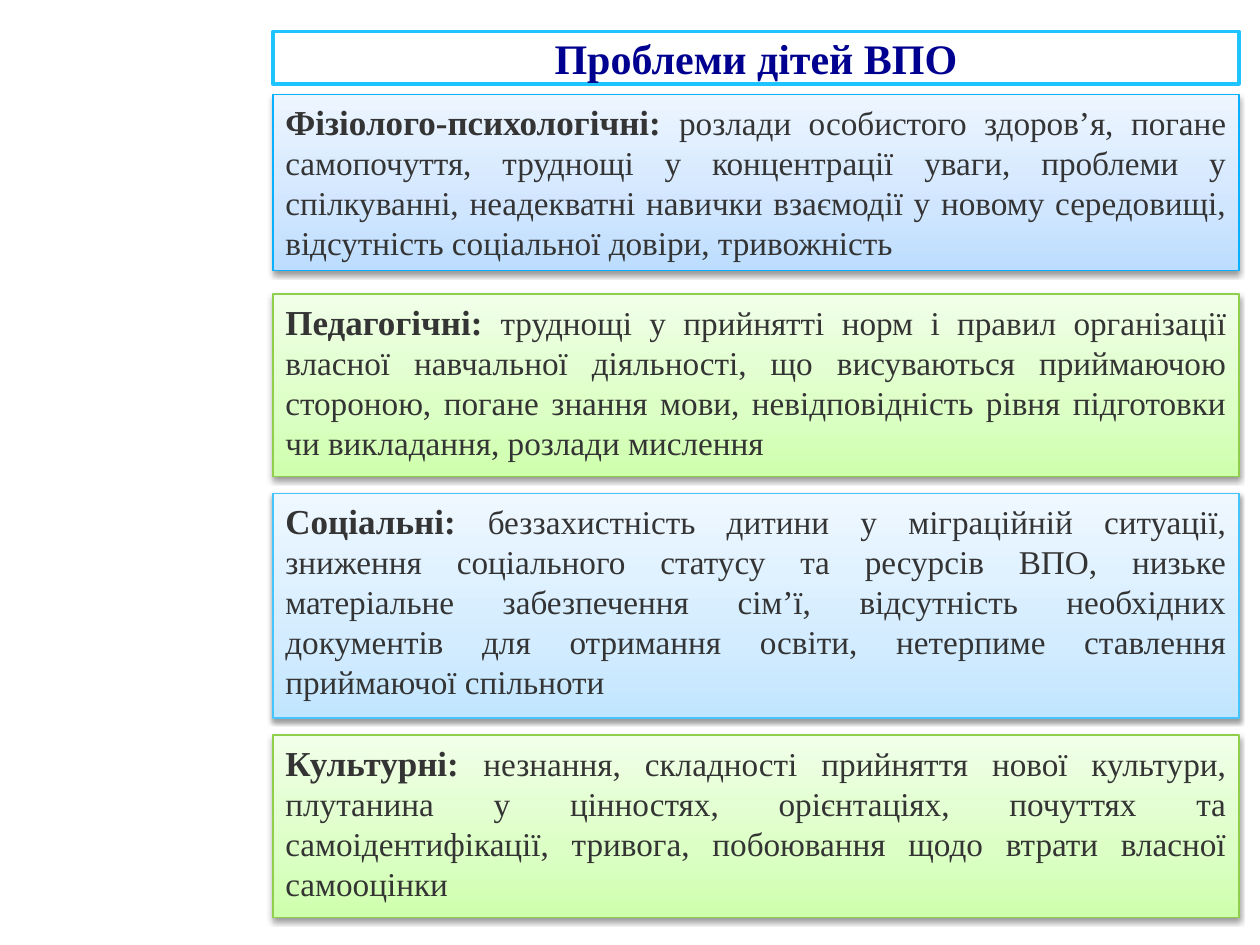
import copy

import lxml.etree
import pptx
import pptx.dml.color
import pptx.enum.shapes
import pptx.enum.text
import pptx.oxml.ns
import pptx.util

Pt = pptx.util.Pt
qn = pptx.oxml.ns.qn
ALIGN = pptx.enum.text.PP_ALIGN
ANCHOR = pptx.enum.text.MSO_ANCHOR
AUTO_SIZE = pptx.enum.text.MSO_AUTO_SIZE

FONT = "Times New Roman"
LEFT, WIDTH = 156, 552
COLORS = {
    "white": "FFFFFF",
    "title": "000090",
    "title_line": "1DC4FF",
    "text": "343434",
    "shadow": "000000",
}
# Gradient colours run from the bottom of a panel to its top.
STYLES = {
    "blue": {"line": "09B0FD", "stops": ("BCDDFF", "D0E6FF", "EDF5FF")},
    "green": {"line": "8FCF4B", "stops": ("CEFFAC", "DBFFC4", "F1FFE9")},
    "sky": {"line": "46C4FD", "stops": ("C1E5FF", "D3ECFF", "EFF8FF")},
}
STOP_POSITIONS = (0, 0.35, 1)

# Top, height, style, heading, description
PANELS = [
    (54, 100.8, "blue", "Фізіолого-психологічні: ",
     "розлади особистого здоров’я, погане самопочуття, труднощі у концентрації "
     "уваги, проблеми у спілкуванні, неадекватні навички взаємодії у новому "
     "середовищі, відсутність соціальної довіри, тривожність"),
    (168, 104.4, "green", "Педагогічні: ",
     "труднощі у прийнятті норм і правил організації власної навчальної "
     "діяльності, що висуваються приймаючою стороною, погане знання мови, "
     "невідповідність рівня підготовки чи викладання, розлади мислення"),
    (282, 128.4, "sky", "Соціальні: ",
     "беззахистність дитини у міграційній ситуації, зниження соціального "
     "статусу та ресурсів ВПО, низьке матеріальне забезпечення сім’ї, "
     "відсутність необхідних документів для отримання освіти, нетерпиме "
     "ставлення приймаючої спільноти"),
    (420, 104.4, "green", "Культурні: ",
     "незнання, складності прийняття нової культури, плутанина у цінностях, "
     "орієнтаціях, почуттях та самоідентифікації, тривога, побоювання щодо "
     "втрати власної самооцінки"),
]


def rgb(value):
    return pptx.dml.color.RGBColor.from_string(value)


def set_line(shape, color, width):
    shape.line.color.rgb = rgb(color)
    shape.line.width = Pt(width)


def set_gradient(shape, colors):
    fill = shape.fill
    fill.gradient()
    fill.gradient_angle = 90
    stop_list = shape.element.spPr.find(".//" + qn("a:gsLst"))
    stop_list.insert(1, copy.deepcopy(stop_list[0]))
    for stop, position, color in zip(fill.gradient_stops, STOP_POSITIONS, colors):
        stop.position = position
        stop.color.rgb = rgb(color)


def set_shadow(shape):
    """Give the shape a soft shadow that falls straight down."""
    shape.shadow.inherit = False
    effects = shape.element.spPr.find(qn("a:effectLst"))
    shadow = lxml.etree.SubElement(
        effects, qn("a:outerShdw"), blurRad=str(Pt(3.1)), dist=str(Pt(1.6)),
        dir="5400000", rotWithShape="0")
    color = lxml.etree.SubElement(shadow, qn("a:srgbClr"), val=COLORS["shadow"])
    lxml.etree.SubElement(color, qn("a:alpha"), val="38000")


def add_title(page, text):
    title = page.shapes.title
    title.left, title.top = Pt(LEFT), Pt(18)
    title.width, title.height = Pt(WIDTH), Pt(30)
    title.fill.solid()
    title.fill.fore_color.rgb = rgb(COLORS["white"])
    set_line(title, COLORS["title_line"], 2)
    frame = title.text_frame
    frame.text = text
    frame.auto_size = AUTO_SIZE.NONE
    frame.vertical_anchor = ANCHOR.MIDDLE
    para = frame.paragraphs[0]
    para.alignment = ALIGN.CENTER
    para.font.name = FONT
    para.font.size = Pt(24)
    para.font.bold = True
    para.font.color.rgb = rgb(COLORS["title"])


def add_panel(page, top, height, style, heading, description):
    panel = page.shapes.add_shape(
        pptx.enum.shapes.MSO_SHAPE.RECTANGLE,
        Pt(LEFT), Pt(top), Pt(WIDTH), Pt(height))
    set_gradient(panel, STYLES[style]["stops"])
    set_line(panel, STYLES[style]["line"], 0.75)
    set_shadow(panel)
    frame = panel.text_frame
    frame.word_wrap = True
    frame.auto_size = AUTO_SIZE.SHAPE_TO_FIT_TEXT
    frame.vertical_anchor = ANCHOR.TOP
    para = frame.paragraphs[0]
    para.alignment = ALIGN.JUSTIFY
    para.font.name = FONT
    para.font.color.rgb = rgb(COLORS["text"])
    for text, size, bold in ((heading, 20, True), (description, 19, False)):
        span = para.add_run()
        span.text = text
        span.font.size = Pt(size)
        span.font.bold = bold


def main():
    deck = pptx.Presentation()
    deck.slide_width, deck.slide_height = Pt(720), Pt(540)
    page = deck.slides.add_slide(deck.slide_layouts.get_by_name("Title Only"))
    add_title(page, "Проблеми дітей ВПО")
    for panel in PANELS:
        add_panel(page, *panel)
    deck.save("out.pptx")


if __name__ == "__main__":
    main()
